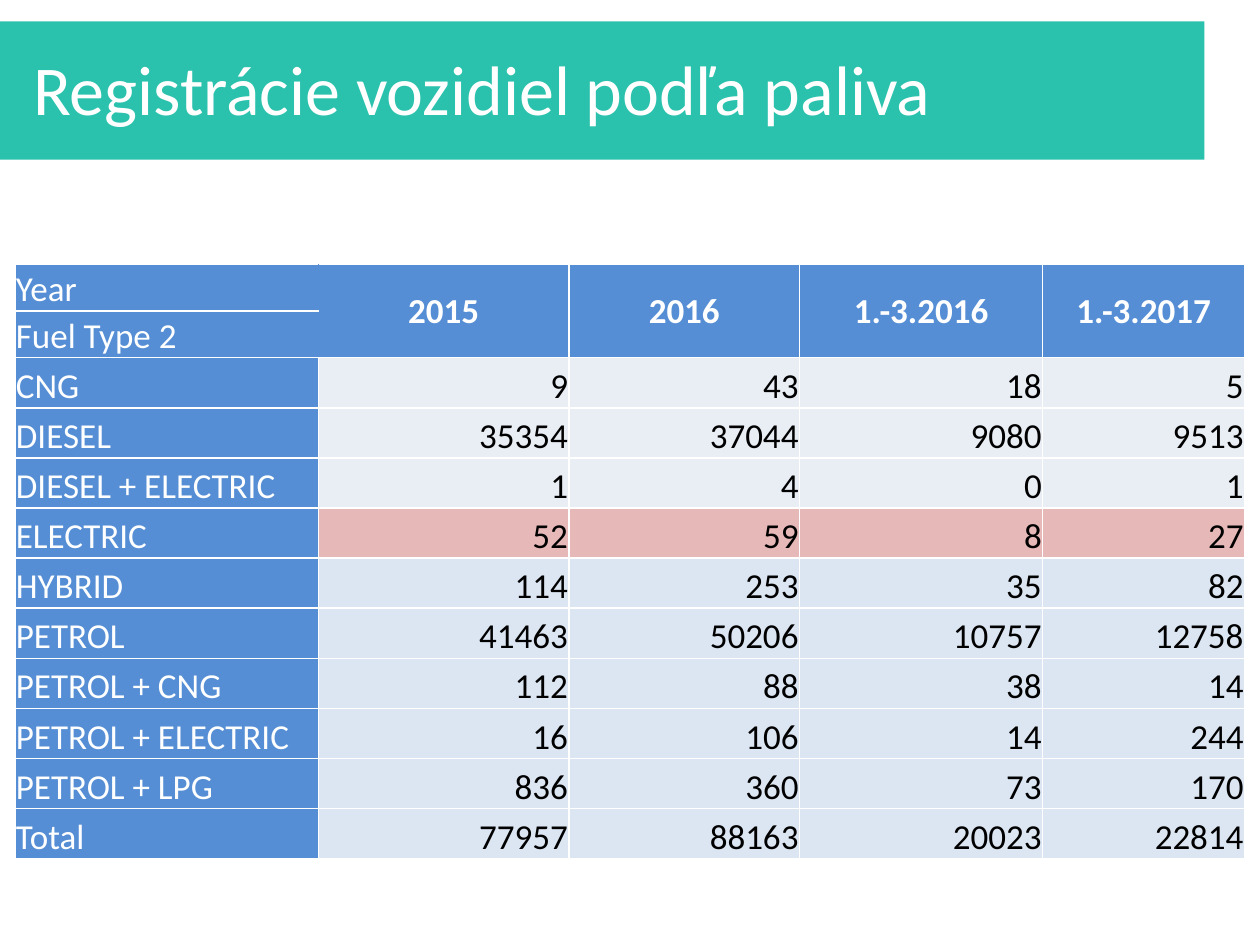
import lxml.etree
import pptx
import pptx.dml.color
import pptx.enum.shapes
import pptx.enum.text
import pptx.oxml.ns
import pptx.util

Cm, Pt = pptx.util.Cm, pptx.util.Pt
ALIGN = pptx.enum.text.PP_ALIGN
ANCHOR = pptx.enum.text.MSO_ANCHOR

HUES = {
    "bar": "2AC2AD",
    "head": "558ED5",
    "pale": "E9EDF4",
    "rose": "E6B9B8",
    "blue": "DCE6F2",
    "white": "FFFFFF",
    "black": "000000",
}
YEARS = ["2015", "2016", "1.-3.2016", "1.-3.2017"]
FUELS = [
    ("CNG", "pale", [9, 43, 18, 5]),
    ("DIESEL", "pale", [35354, 37044, 9080, 9513]),
    ("DIESEL + ELECTRIC", "pale", [1, 4, 0, 1]),
    ("ELECTRIC", "rose", [52, 59, 8, 27]),
    ("HYBRID", "blue", [114, 253, 35, 82]),
    ("PETROL", "blue", [41463, 50206, 10757, 12758]),
    ("PETROL + CNG", "blue", [112, 88, 38, 14]),
    ("PETROL + ELECTRIC", "blue", [16, 106, 14, 244]),
    ("PETROL + LPG", "blue", [836, 360, 73, 170]),
    ("Total", "blue", [77957, 88163, 20023, 22814]),
]
WIDTHS = [6.12, 5.05, 4.65, 4.9, 4.07]
HEAD_ROW, FUEL_ROW = 0.94, 1.01


def rgb(name):
    return pptx.dml.color.RGBColor.from_string(HUES[name])


def add_run(para, text, size, hue, bold=False):
    run = para.add_run()
    run.text = text
    font = run.font
    font.name, font.size, font.bold = "Calibri", Pt(size), bold
    font.color.rgb = rgb(hue)


def add_title(slide, left, top, width, height):
    """Place the coloured bar and lay the title over it."""
    bar = slide.shapes.add_shape(
        pptx.enum.shapes.MSO_SHAPE.RECTANGLE,
        Cm(left), Cm(top), Cm(width), Cm(height))
    bar.shadow.inherit = False
    bar.fill.solid()
    bar.fill.fore_color.rgb = rgb("bar")
    bar.line.fill.background()

    title = slide.shapes.title
    bar.element.addnext(title.element)
    title.left, title.top = Cm(left + 0.2), Cm(top + 0.36)
    title.width, title.height = Cm(width + 1.05), Cm(1.96)
    frame = title.text_frame
    frame.word_wrap = True
    frame.auto_size = pptx.enum.text.MSO_AUTO_SIZE.SHAPE_TO_FIT_TEXT
    frame.vertical_anchor = ANCHOR.TOP
    frame.margin_left = Cm(0.57)
    para = frame.paragraphs[0]
    para.alignment = ALIGN.LEFT
    add_run(para, "Registrácie vozidiel podľa paliva", 40, "white")


def add_edges(cell, **hues):
    """Draw the four cell borders, white unless a side (L, R) is named."""
    props = cell._tc.get_or_add_tcPr()
    qn = pptx.oxml.ns.qn
    for side in "LRTB":
        line = lxml.etree.SubElement(props, qn(f"a:ln{side}"), w=str(Pt(1)))
        fill = lxml.etree.SubElement(line, qn("a:solidFill"))
        lxml.etree.SubElement(fill, qn("a:srgbClr"),
                              val=HUES[hues.get(side, "white")])


def style_cell(cell, fill, **edges):
    add_edges(cell, **edges)
    cell.fill.solid()
    cell.fill.fore_color.rgb = rgb(fill)
    cell.margin_left = cell.margin_right = cell.margin_top = Cm(0.02)
    cell.margin_bottom = 0
    cell.vertical_anchor = ANCHOR.BOTTOM


def fill_cell(cell, text, hue="white", align=ALIGN.LEFT, bold=False):
    para = cell.text_frame.paragraphs[0]
    para.alignment = align
    add_run(para, text, 20, hue, bold)


def add_head(table):
    for row, text in enumerate(["Year", "Fuel Type 2"]):
        style_cell(table.cell(row, 0), "head", R="head")
        fill_cell(table.cell(row, 0), text)
        for col in range(1, len(WIDTHS)):
            edges = {"L": "head"} if col == 1 else {}
            style_cell(table.cell(row, col), "head", **edges)
    for col, year in enumerate(YEARS, 1):
        cell = table.cell(0, col)
        cell.merge(table.cell(1, col))
        cell.vertical_anchor = ANCHOR.MIDDLE
        fill_cell(cell, year, align=ALIGN.CENTER, bold=True)


def add_fuels(slide, left, top):
    heights = [HEAD_ROW] * 2 + [FUEL_ROW] * len(FUELS)
    table = slide.shapes.add_table(
        len(heights), len(WIDTHS), Cm(left), Cm(top),
        Cm(sum(WIDTHS)), Cm(sum(heights))).table
    table.first_row = table.horz_banding = False
    for col, width in zip(table.columns, WIDTHS):
        col.width = Cm(width)
    for row, height in zip(table.rows, heights):
        row.height = Cm(height)

    add_head(table)
    for row, (fuel, hue, counts) in enumerate(FUELS, 2):
        style_cell(table.cell(row, 0), "head")
        fill_cell(table.cell(row, 0), fuel)
        for col, count in enumerate(counts, 1):
            cell = table.cell(row, col)
            style_cell(cell, hue)
            fill_cell(cell, str(count), "black", ALIGN.RIGHT)


def main():
    deck = pptx.Presentation()
    deck.slide_width, deck.slide_height = Cm(25.4), Cm(19.05)
    slide = deck.slides.add_slide(deck.slide_layouts.get_by_name("Title Only"))
    add_title(slide, -0.1, 0.43, 24.38, 2.79)
    add_fuels(slide, 0.3, 5.33)
    deck.save("out.pptx")


if __name__ == "__main__":
    main()
